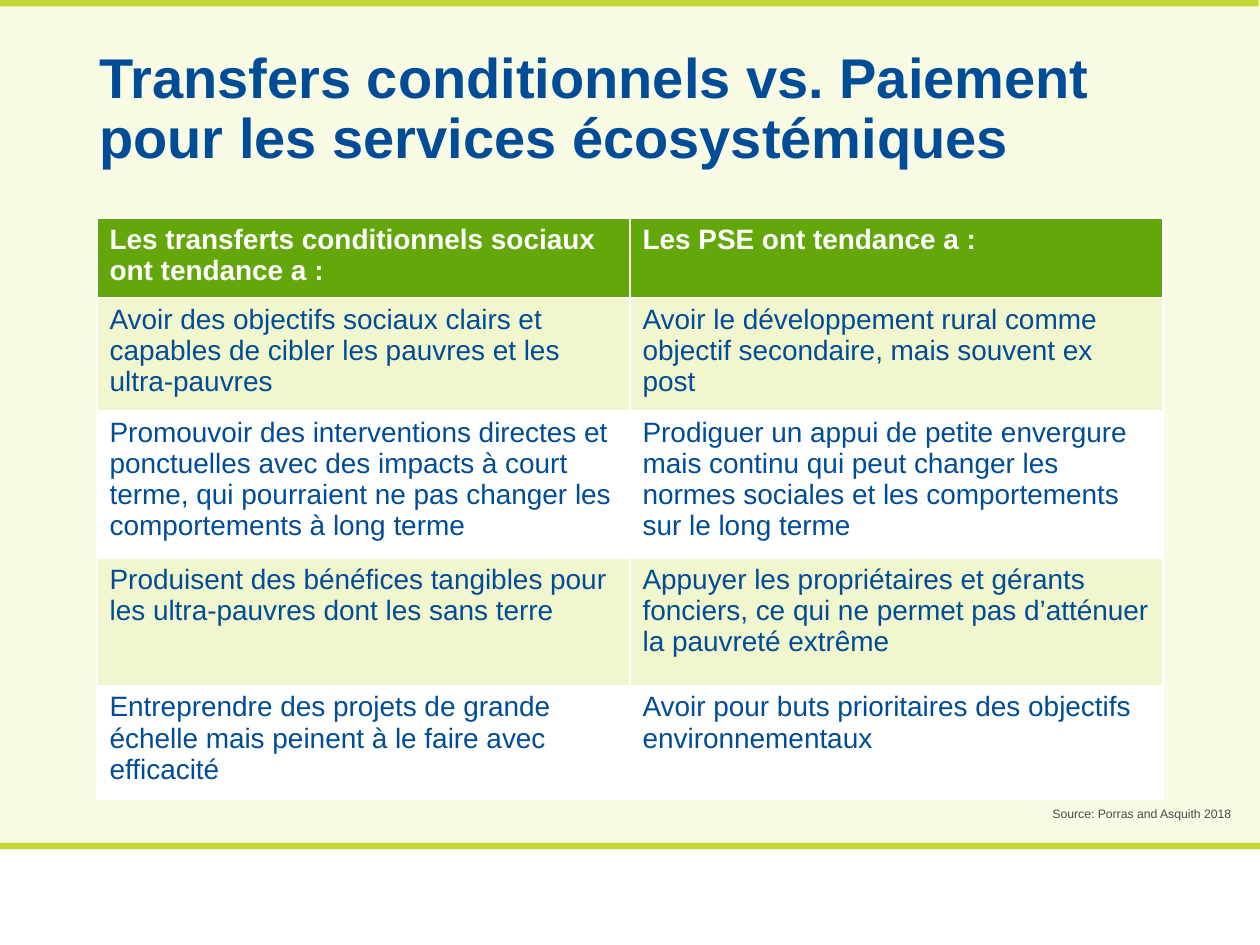
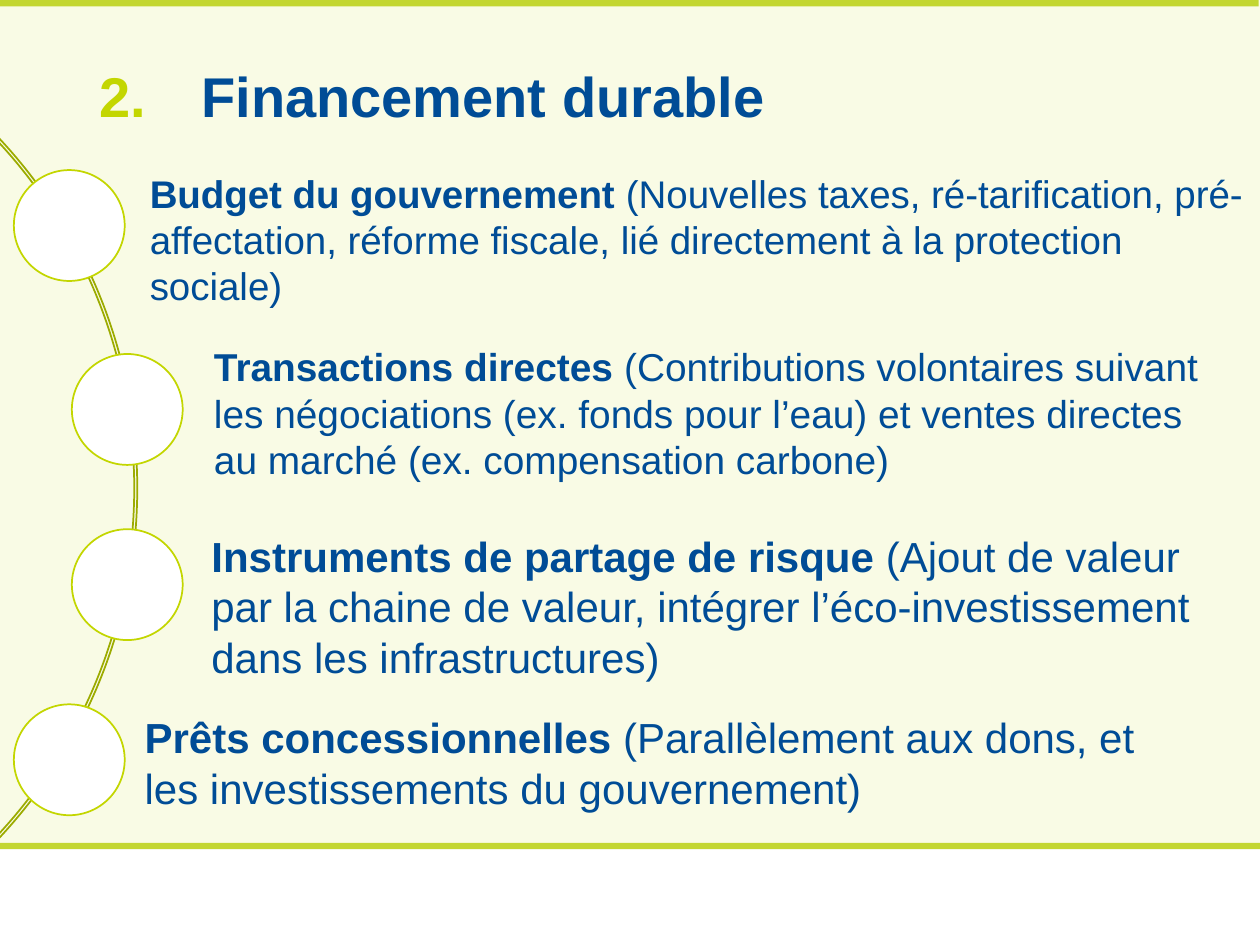
import pptx
import pptx.util
import pptx.dml.color
import pptx.enum.shapes
import pptx.enum.text
import pptx.oxml

Inches = pptx.util.Inches
Pt = pptx.util.Pt
RGB = pptx.dml.color.RGBColor
Kind = pptx.enum.shapes.MSO_SHAPE
Anchor = pptx.enum.text.MSO_ANCHOR
Align = pptx.enum.text.PP_ALIGN

BLUE = RGB(0x00, 0x4C, 0x96)
GREEN = RGB(0x64, 0xA7, 0x0B)
BAND = RGB(0xC3, 0xD6, 0x31)
LIME = RGB(0xC3, 0xD6, 0x00)
OLIVE = RGB(0x9C, 0xAB, 0x00)
PALE = RGB(0xF9, 0xFB, 0xE5)
TINT = RGB(0xF2, 0xF6, 0xCE)
GRAY = RGB(0x4B, 0x4B, 0x45)
WHITE = RGB(0xFF, 0xFF, 0xFF)

TITLE = {"name": "Arial", "size": Pt(32), "bold": True}
HEAD = {"name": "Arial", "size": Pt(16), "bold": True}
CELL = {**HEAD, "bold": False}
NOTE = {"name": "Arial", "size": Pt(7)}
SPACE = 'xmlns:a="http://schemas.openxmlformats.org/drawingml/2006/main"'

ROWS = [
    ("Les transferts conditionnels sociaux ont tendance a :",
     "Les PSE ont tendance a :"),
    ("Avoir des objectifs sociaux clairs et capables de cibler les pauvres et les ultra-pauvres",
     "Avoir le développement rural comme objectif secondaire, mais souvent ex post"),
    ("Promouvoir des interventions directes et ponctuelles avec des impacts à court terme, "
     "qui pourraient ne pas changer les comportements à long terme",
     "Prodiguer un appui de petite envergure mais continu qui peut changer les normes "
     "sociales et les comportements sur le long terme"),
    ("Produisent des bénéfices tangibles pour les ultra-pauvres dont les sans terre",
     "Appuyer les propriétaires et gérants fonciers, ce qui ne permet pas d’atténuer "
     "la pauvreté extrême"),
    ("Entreprendre des projets de grande échelle mais peinent à le faire avec efficacité",
     "Avoir pour buts prioritaires des objectifs environnementaux"),
]
TALL = [0.59, 0.84, 1.09, 1.01, 0.85]

FUNDS = [
    ("Budget du gouvernement ",
     "(Nouvelles taxes, ré-tarification, pré-affectation, réforme fiscale, "
     "lié directement à la protection sociale)",
     22, (1.09, 1.3, 8.91, 0.94), (0.11, 1.35)),
    ("Transactions directes ",
     "(Contributions volontaires suivant les négociations (ex. fonds pour l’eau) "
     "et ventes directes au marché (ex. compensation carbone)",
     22.2, (1.6, 2.67, 8.2, 1.43), (0.57, 2.81)),
    ("Instruments de partage de risque ",
     "(Ajout de valeur par la chaine de valeur, intégrer l’éco-investissement "
     "dans les infrastructures)",
     24, (1.58, 4.16, 8.2, 1.43), (0.57, 4.2)),
    ("Prêts concessionnelles ",
     "(Parallèlement aux dons, et les investissements du gouvernement)",
     24, (1.05, 5.6, 8.16, 0.94), (0.11, 5.59)),
]


def place(box):
    return [Inches(side) for side in box]


def style(font, look, color):
    for key, value in look.items():
        setattr(font, key, value)
    font.color.rgb = color


def draw(slide, kind, box, fill=None, line=None):
    shape = slide.shapes.add_shape(kind, *place(box))
    shape.shadow.inherit = False
    if fill is None:
        shape.fill.background()
    else:
        shape.fill.solid()
        shape.fill.fore_color.rgb = fill
    if line is None:
        shape.line.fill.background()
    else:
        shape.line.color.rgb = line
        shape.line.width = Pt(1)
    return shape


def write(slide, box, runs, anchor=Anchor.TOP):
    frame = slide.shapes.add_textbox(*place(box)).text_frame
    frame.word_wrap = True
    frame.vertical_anchor = anchor
    para = frame.paragraphs[0]
    for text, look, color in runs:
        run = para.add_run()
        run.text = text
        style(run.font, look, color)
    return para


def start(deck):
    slide = deck.slides.add_slide(deck.slide_layouts[6])
    slide.background.fill.solid()
    slide.background.fill.fore_color.rgb = PALE
    draw(slide, Kind.RECTANGLE, (0, 6.74, 10, 0.76), WHITE)
    for left, top in ((0, 6.69), (-0.01, 0)):
        draw(slide, Kind.RECTANGLE, (left, top, 10, 0.05), BAND)
    return slide


def head(slide, box, text, number=None):
    para = write(slide, box, [(text, TITLE, BLUE)], Anchor.MIDDLE)
    para.line_spacing = 0.9
    if number:
        props = para._p.get_or_add_pPr()
        props.set("marL", str(Inches(0.81)))
        props.set("indent", str(-Inches(0.81)))
        for part in (f'<a:buClr {SPACE}><a:srgbClr val="{LIME}"/></a:buClr>',
                     f'<a:buFont {SPACE} typeface="+mj-lt"/>',
                     f'<a:buAutoNum {SPACE} type="arabicPeriod" startAt="{number}"/>'):
            props.append(pptx.oxml.parse_xml(part))


def edge(cell, widths):
    props = cell._tc.get_or_add_tcPr()
    for side, width in widths.items():
        props.append(pptx.oxml.parse_xml(
            f'<a:ln{side} {SPACE} w="{Pt(width)}"><a:solidFill>'
            f'<a:srgbClr val="{WHITE}"/></a:solidFill></a:ln{side}>'))


def grid(slide, box):
    table = slide.shapes.add_table(len(ROWS), 2, *place(box)).table
    for col in table.columns:
        col.width = Inches(box[2] / 2)
    for row, (texts, tall) in enumerate(zip(ROWS, TALL)):
        table.rows[row].height = Inches(tall)
        top = row == 0
        fill = GREEN if top else TINT if row % 2 else WHITE
        for col, text in enumerate(texts):
            cell = table.cell(row, col)
            edge(cell, {"L": 1, "R": 1, "T": 1, "B": 1})
            cell.fill.solid()
            cell.fill.fore_color.rgb = fill
            run = cell.text_frame.paragraphs[0].add_run()
            run.text = text
            style(run.font, HEAD if top else CELL, WHITE if top else BLUE)


def wheel(slide, box):
    arc = draw(slide, Kind.BLOCK_ARC, box, line=OLIVE)
    for spot, value in enumerate((189, 27, 0.003)):
        arc.adjustments[spot] = value
    for name, text, size, area, dot in FUNDS:
        draw(slide, Kind.OVAL, (*dot, 0.88, 0.88), WHITE, LIME)
        look = {"name": "Arial", "size": Pt(size)}
        write(slide, area, [(name, {**look, "bold": True}, BLUE),
                            (text, {**look, "bold": False}, BLUE)])


def compare(deck):
    slide = start(deck)
    head(slide, (0.69, 0.15, 8.62, 1.45),
         "Transfers conditionnels vs. Paiement pour les services écosystémiques")
    grid(slide, (0.77, 1.73, 8.46, 4.38))
    para = write(slide, (6.44, 6.35, 3.43, 0.22),
                 [("Source: Porras and Asquith 2018", NOTE, GRAY)])
    para.alignment = Align.RIGHT


def finance(deck):
    slide = start(deck)
    head(slide, (0.69, 0.24, 8.62, 1.09), "Financement durable", 2)
    wheel(slide, (-7.04, -0.19, 8.13, 8.13))


def main():
    deck = pptx.Presentation()
    deck.slide_width = Inches(10)
    deck.slide_height = Inches(7.5)
    compare(deck)
    finance(deck)
    deck.save("out.pptx")


if __name__ == "__main__":
    main()
